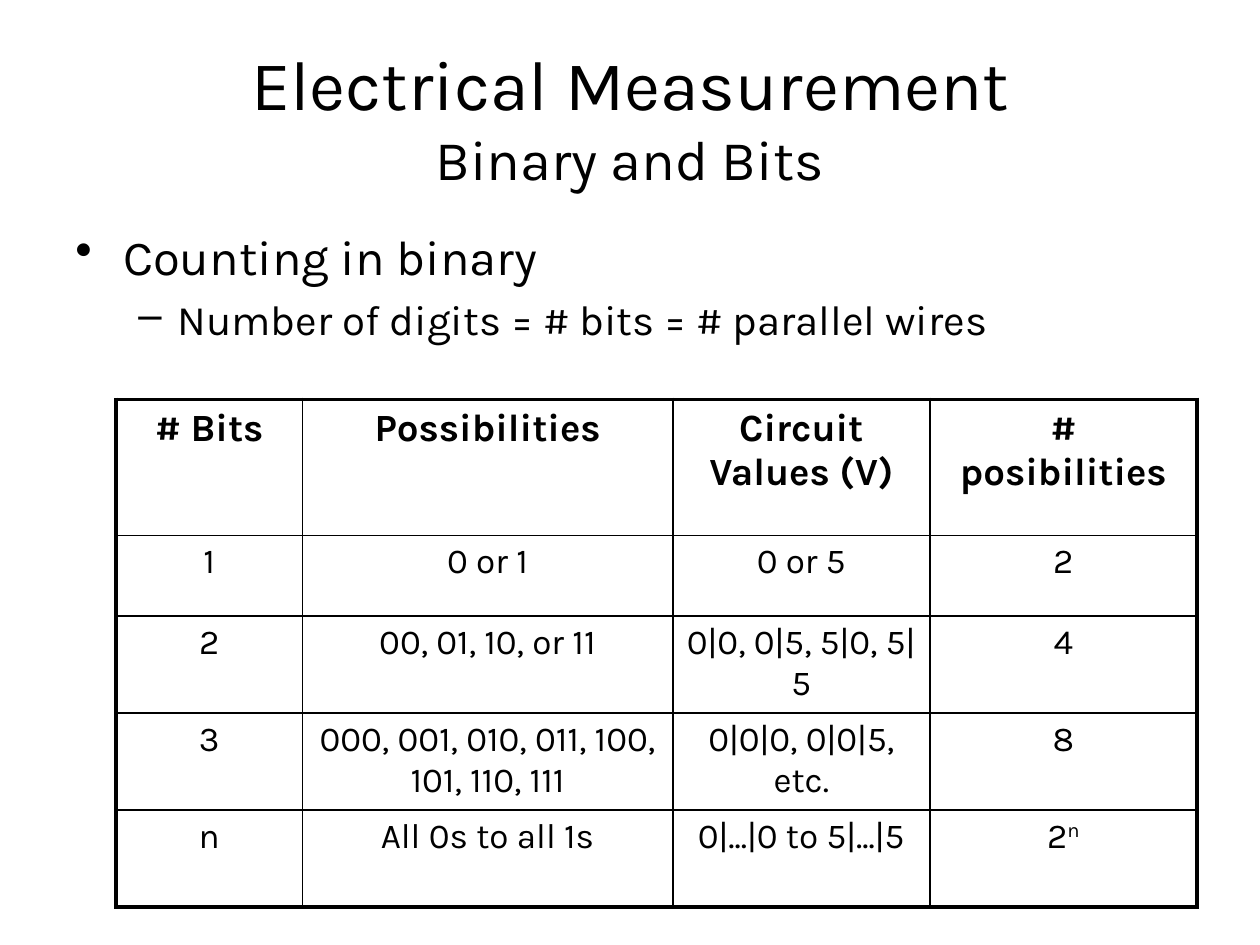
"""Build a slide on binary counting with a table of bits and circuit values."""
from dataclasses import dataclass

from pptx import Presentation
from pptx.dml.color import RGBColor
from pptx.enum.text import MSO_ANCHOR as Anchor, PP_ALIGN as Align
from pptx.oxml.ns import qn
from pptx.util import Inches, Pt
from lxml.etree import SubElement


@dataclass(frozen=True)
class Theme:
    font: str = "Karla"
    ink: str = "000000"
    paper: str = "FFFFFF"
    title: int = 40
    subtitle: int = 32
    bullet: int = 28
    dash: int = 24
    header: int = 22
    cell: int = 20
    outer_line: float = 2.25
    inner_line: float = 1


class SlideBuilder:
    def __init__(self, slide, theme):
        self.slide = slide
        self.theme = theme
        background = slide.background.fill
        background.solid()
        background.fore_color.rgb = RGBColor.from_string(theme.paper)

    def span(self, para, text, size, bold=False, raised=False):
        span = para.add_run()
        span.text = text
        font = span.font
        font.name, font.size, font.bold = self.theme.font, Pt(size), bold
        font.color.rgb = RGBColor.from_string(self.theme.ink)
        if raised:
            span._r.get_or_add_rPr().set("baseline", "30000")

    def text_box(self, left, top, width, height, anchor=Anchor.TOP):
        box = self.slide.shapes.add_textbox(
            Inches(left), Inches(top), Inches(width), Inches(height))
        frame = box.text_frame
        frame.word_wrap = True
        frame.vertical_anchor = anchor
        return frame

    def title(self, title, subtitle):
        para = self.text_box(0.5, 0.3, 9, 1.25, Anchor.MIDDLE).paragraphs[0]
        para.alignment = Align.CENTER
        self.span(para, title, self.theme.title)
        para.add_line_break()
        self.span(para, subtitle, self.theme.subtitle)

    def bullets(self, items):
        frame = self.text_box(0.5, 1.75, 7.67, 2.08)
        for index, (text, mark, level, size, margin, hanging) in enumerate(items):
            para = frame.add_paragraph() if index else frame.paragraphs[0]
            para.level = level
            para.space_before = Pt(size * 0.2)
            properties = para._p.get_or_add_pPr()
            properties.set("marL", str(Inches(margin)))
            properties.set("indent", str(-Inches(hanging)))
            SubElement(properties, qn("a:buChar")).set("char", mark)
            self.span(para, text, size)

    def border(self, cell, side, width):
        line = SubElement(cell._tc.get_or_add_tcPr(), qn(f"a:ln{side}"))
        line.set("w", str(Pt(width)))
        fill = SubElement(line, qn("a:solidFill"))
        SubElement(fill, qn("a:srgbClr")).set("val", self.theme.ink)

    def table(self, left, top, widths, heights, rows):
        frame = self.slide.shapes.add_table(
            len(heights), len(widths), Inches(left), Inches(top),
            Inches(sum(widths)), Inches(sum(heights)))
        table = frame.table
        table.first_row = table.horz_banding = False
        for column, width in zip(table.columns, widths):
            column.width = Inches(width)
        for row, height in zip(table.rows, heights):
            row.height = Inches(height)
        for row_index, row in enumerate(rows):
            for column_index, content in enumerate(row):
                cell = table.cell(row_index, column_index)
                outer_sides = {
                    "L": column_index == 0,
                    "R": column_index == len(widths) - 1,
                    "T": row_index == 0,
                    "B": row_index == len(heights) - 1,
                }
                for side, outer in outer_sides.items():
                    self.border(cell, side, self.theme.outer_line if outer
                                else self.theme.inner_line)
                cell.fill.background()
                self.cell_text(cell, content, header=row_index == 0)

    def cell_text(self, cell, content, header):
        size = self.theme.header if header else self.theme.cell
        para = cell.text_frame.paragraphs[0]
        para.alignment = Align.CENTER
        para.space_before = Pt(size * 0.2)
        base, _, power = content.partition("^")
        self.span(para, base, size, header)
        if power:
            self.span(para, power, size, header, raised=True)


def main():
    theme = Theme()
    deck = Presentation()
    deck.slide_width, deck.slide_height = Inches(10), Inches(7.5)
    page = SlideBuilder(deck.slides.add_slide(deck.slide_layouts[6]), theme)
    page.title("Electrical Measurement", "Binary and Bits")
    page.bullets([
        ("Counting in binary", "•", 0, theme.bullet, 0.38, 0.38),
        ("Number of digits = # bits = # parallel wires", "–", 1,
         theme.dash, 0.81, 0.31),
    ])
    page.table(0.92, 3.17, [1.48, 2.94, 2.04, 2.12], [1.08, 0.64] + [0.77] * 3, [
        ["# Bits", "Possibilities", "Circuit Values (V)", "# posibilities"],
        ["1", "0 or 1", "0 or 5", "2"],
        ["2", "00, 01, 10, or 11", "0|0, 0|5, 5|0, 5|5", "4"],
        ["3", "000, 001, 010, 011, 100, 101, 110, 111", "0|0|0, 0|0|5, etc.", "8"],
        ["n", "All 0s to all 1s", "0|...|0 to 5|...|5", "2^n"],
    ])
    deck.save("out.pptx")


if __name__ == "__main__":
    main()
